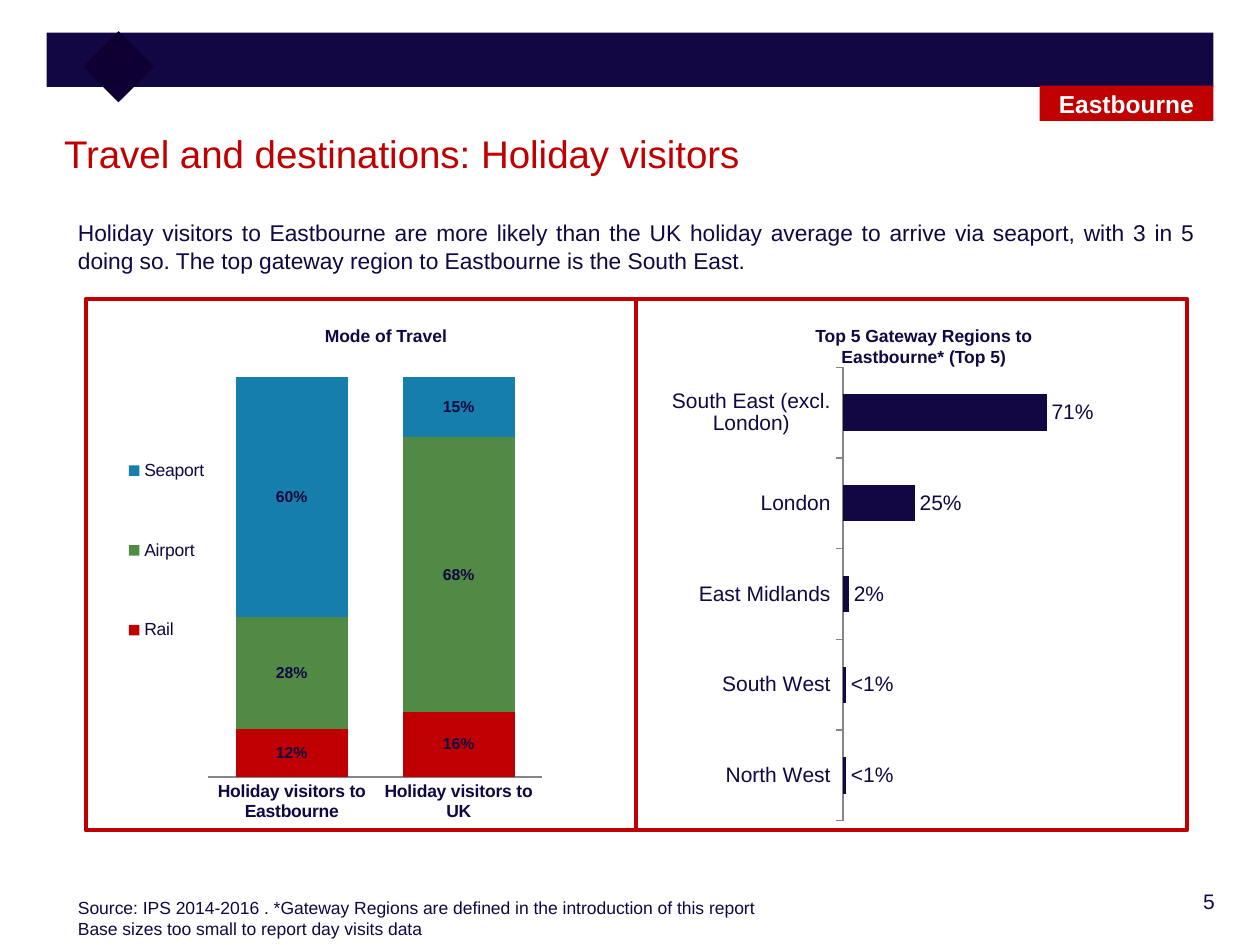
"""Build the holiday travel slide with two charts, on a grid of 100 columns by 75 rows."""
import pptx
import pptx.chart.data
import pptx.dml.color
import pptx.enum.chart
import pptx.enum.shapes
import pptx.enum.text
import pptx.oxml
import pptx.oxml.ns
import pptx.util

COLS = 100
WIDE = pptx.util.Inches(10)
TALL = pptx.util.Inches(7.5)
THEME = {
    "font": "Arial", "navy": "120742", "dark": "0E0033", "red": "C00000",
    "green": "518A45", "blue": "157EAB", "white": "FFFFFF", "gray": "868686",
    "head": 22, "tag": 14, "body": 13, "label": 12, "small": 10, "tiny": 9, "line": 2.25,
}
TEXTS = [
    ((85.3, 70, 12.1, 3.6), ["5"], "label", "navy", False, "RIGHT"),
    ((4.1, 9.8, 92.1, 6.1), ["Travel and destinations: Holiday visitors"], "head", "red", False, "LEFT"),
    ((24.8, 25.3, 14.7, 3.1), ["Mode of Travel"], "small", "navy", True, "LEFT"),
    ((5.2, 16.9, 90.5, 7.4), [
        "Holiday visitors to Eastbourne are more likely than the UK holiday average to arrive via "
        "seaport, with 3 in 5 doing so. The top gateway region to Eastbourne is the South East."
    ], "body", "navy", False, "JUSTIFY"),
    ((62.7, 25.3, 21.2, 4.6), ["Top 5 Gateway Regions to Eastbourne* (Top 5)"], "small", "navy", True, "CENTER"),
    ((5.2, 70.7, 90.8, 4.4), [
        "Source: IPS 2014-2016 . *Gateway Regions are defined in the introduction of this report",
        "Base sizes too small to report day visits data",
    ], "small", "navy", False, "LEFT"),
]
TAG = "Eastbourne"
MODE = {
    "kind": "COLUMN_STACKED_100", "box": (7.7, 27.6, 36.8, 38.3),
    "cats": ["Holiday visitors to Eastbourne", "Holiday visitors to UK"],
    "rows": [("Rail", (0.12, 0.16), "red"), ("Airport", (0.28, 0.68), "green"),
             ("Seaport", (0.6, 0.15), "blue")],
    "gap": 49, "top": 1, "plot": (0.24, 0.06, 0.72, 0.83),
    "size": "small", "mark": "tiny", "bold": True, "tick": "NONE",
}
GATE = {
    "kind": "BAR_CLUSTERED", "box": (53.1, 28.4, 33.7, 37.5),
    "cats": ["South East (excl. London)", "London", "East Midlands", "South West", "North West"],
    "rows": [("Series 1", (0.71, 0.25, 0.02, 0.01, 0.01), "navy")],
    "gap": 150, "top": 0.8, "plot": (0.41, 0.02, 0.54, 0.96),
    "size": "label", "mark": "label", "bold": False, "tick": "OUTSIDE",
}
KEY = (0.04, 0.11, 0.22, 0.62)
LOW = {3: "<1%", 4: "<1%"}
PANEL = (6.8, 23.7, 43.7, 42.2)


def grid(box):
    return [round(n * WIDE / COLS) for n in box]


def tint(name):
    return pptx.dml.color.RGBColor.from_string(THEME[name])


def style(font, size, color="navy", bold=False):
    font.name = THEME["font"]
    font.size = pptx.util.Pt(THEME[size])
    font.color.rgb = tint(color)
    font.bold = bold


def write(frame, lines, size, color, bold, align):
    frame.word_wrap = True
    frame.text = "\n".join(lines)
    for para in frame.paragraphs:
        para.alignment = getattr(pptx.enum.text.PP_ALIGN, align)
        style(para.font, size, color, bold)


def block(slide, box, fill=None, line=None):
    shape = slide.shapes.add_shape(pptx.enum.shapes.MSO_SHAPE.RECTANGLE, *grid(box))
    shape.shadow.inherit = False
    if fill:
        shape.fill.solid()
        shape.fill.fore_color.rgb = tint(fill)
    else:
        shape.fill.background()
    if line:
        shape.line.color.rgb = tint(line)
        shape.line.width = pptx.util.Pt(THEME["line"])
    else:
        shape.line.fill.background()
    return shape


def place(node, spot, box, inner=False):
    for old in node.findall(pptx.oxml.ns.qn("c:layout")):
        node.remove(old)
    parts = '<c:layoutTarget val="inner"/>' if inner else ""
    parts += "".join(f'<c:{k}Mode val="edge"/>' for k in "xy")
    parts += "".join(f'<c:{k} val="{v}"/>' for k, v in zip("xywh", box))
    node.insert(spot, pptx.oxml.parse_xml(
        f'<c:layout {pptx.oxml.ns.nsdecls("c")}><c:manualLayout>{parts}</c:manualLayout></c:layout>'))


def graph(slide, spec):
    data = pptx.chart.data.CategoryChartData(number_format="0%")
    data.categories = spec["cats"]
    for name, vals, _ in spec["rows"]:
        data.add_series(name, vals)
    kind = getattr(pptx.enum.chart.XL_CHART_TYPE, spec["kind"])
    chart = slide.shapes.add_chart(kind, *grid(spec["box"]), data).chart
    chart.has_title = False
    chart.has_legend = False
    style(chart.font, spec["size"])
    plot = chart.plots[0]
    plot.vary_by_categories = False
    plot.gap_width = spec["gap"]
    cat, val = chart.category_axis, chart.value_axis
    cat.major_tick_mark = getattr(pptx.enum.chart.XL_TICK_MARK, spec["tick"])
    cat.format.line.color.rgb = tint("gray")
    style(cat.tick_labels.font, spec["size"], bold=spec["bold"])
    val.minimum_scale, val.maximum_scale = 0, spec["top"]
    val.has_major_gridlines = False
    val.visible = False
    for series, row in zip(plot.series, spec["rows"]):
        series.format.fill.solid()
        series.format.fill.fore_color.rgb = tint(row[2])
        marks = series.data_labels
        marks.show_value = True
        marks.number_format, marks.number_format_is_linked = "0%", False
        style(marks.font, spec["mark"], bold=spec["bold"])
    place(chart.element.find(".//" + pptx.oxml.ns.qn("c:plotArea")), 0, spec["plot"], True)
    return chart


def main():
    deck = pptx.Presentation()
    deck.slide_width, deck.slide_height = WIDE, TALL
    slide = deck.slides.add_slide(deck.slide_layouts[6])
    block(slide, (3.7, 2.6, 92.6, 4.3), "navy")
    block(slide, (7.4, 3.3, 4, 4), "dark").rotation = 45
    for box, *rest in TEXTS:
        write(slide.shapes.add_textbox(*grid(box)).text_frame, *rest)

    mode = graph(slide, MODE)
    mode.plots[0].overlap = 100
    mode.has_legend = True
    mode.legend.position = pptx.enum.chart.XL_LEGEND_POSITION.LEFT
    mode.legend.include_in_layout = False
    style(mode.legend.font, "small")
    place(mode.legend._element, 1, KEY)

    gate = graph(slide, GATE)
    gate.category_axis.reverse_order = True
    bars = gate.plots[0].series[0]
    for spot, text in LOW.items():
        mark = bars.points[spot].data_label
        mark.text_frame.text = text
        style(mark.text_frame.paragraphs[0].font, "label")
        mark.position = pptx.enum.chart.XL_LABEL_POSITION.OUTSIDE_END

    left, top, wide, tall = PANEL
    for col in range(2):
        block(slide, (left + col * wide, top, wide, tall), line="red")
    tag = block(slide, (82.5, 6.8, 13.8, 2.8), "red").text_frame
    tag.vertical_anchor = pptx.enum.text.MSO_ANCHOR.MIDDLE
    write(tag, [TAG], "tag", "white", True, "CENTER")
    deck.save("out.pptx")


if __name__ == "__main__":
    main()
